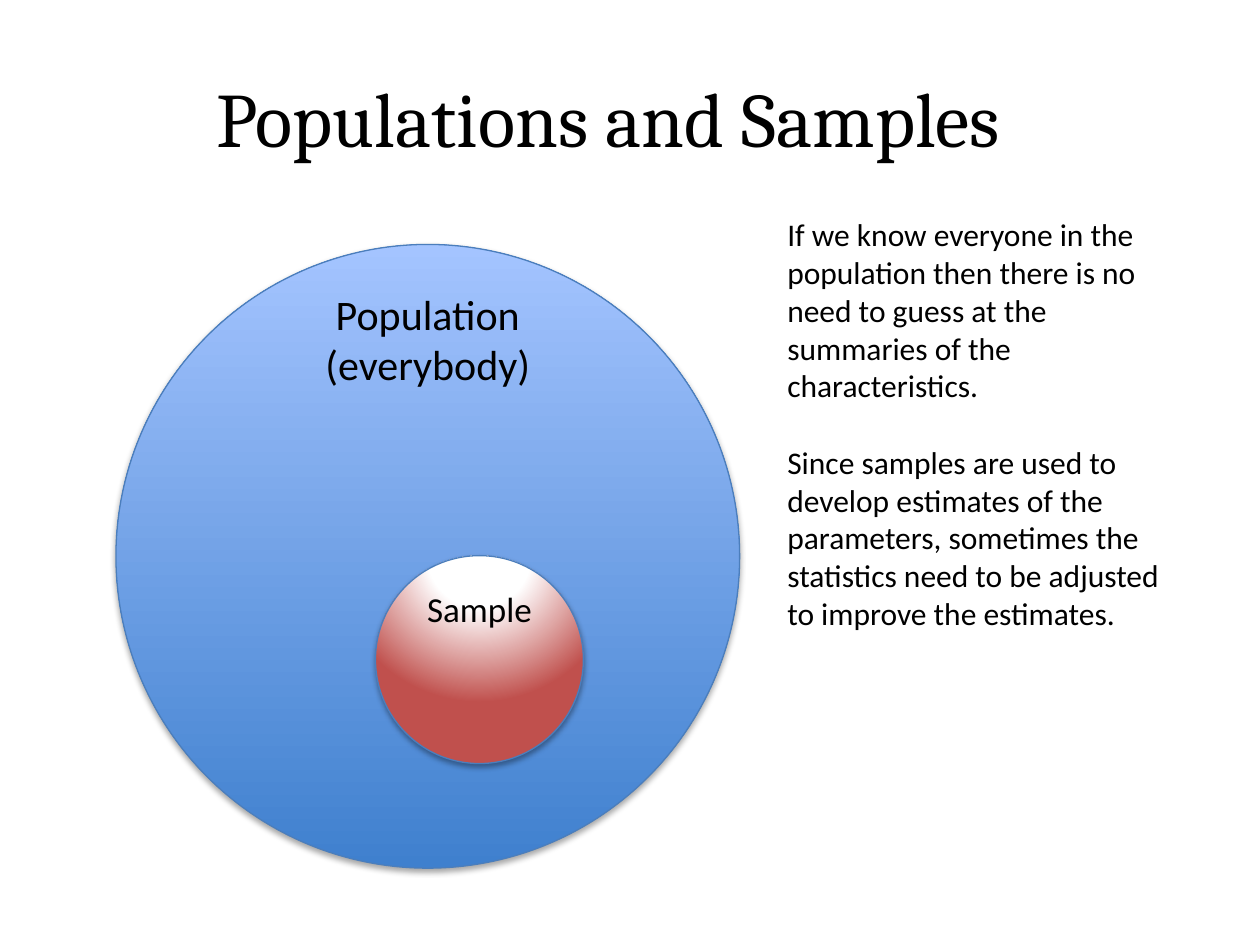
from lxml import etree
from pptx import Presentation
from pptx.dml.color import RGBColor
from pptx.enum.shapes import MSO_SHAPE
from pptx.enum.text import MSO_ANCHOR, PP_ALIGN
from pptx.oxml.ns import qn
from pptx.util import Inches, Pt

OVAL, RECTANGLE = MSO_SHAPE.OVAL, MSO_SHAPE.RECTANGLE
TOP, MIDDLE = MSO_ANCHOR.TOP, MSO_ANCHOR.MIDDLE
LEFT, CENTER = PP_ALIGN.LEFT, PP_ALIGN.CENTER
BLACK = RGBColor(0x00, 0x00, 0x00)
WHITE = RGBColor(0xFF, 0xFF, 0xFF)
DEEP_BLUE = RGBColor(0x3F, 0x80, 0xCE)
LIGHT_BLUE = RGBColor(0xA4, 0xC4, 0xFF)
OUTLINE_BLUE = RGBColor(0x4B, 0x7E, 0xBC)
RED = RGBColor(0xC0, 0x50, 0x4D)
WIDTH, HEIGHT = 10, 7.5

TITLE = "Populations and Samples"
NOTES = [
    "If we know everyone in the population then there is no need to guess "
    "at the summaries of the characteristics.",
    "Since samples are used to develop estimates of the parameters, sometimes "
    "the statistics need to be adjusted to improve the estimates.",
]
POPULATION = {
    "circle": (0.92, 1.94, 4.95),
    "stops": [(0, DEEP_BLUE), (100, LIGHT_BLUE)],
    "label": ["Population\n(everybody)"],
    "label_area": (2.32, 2.24, 2.15, 0.91),
    "size": 24,
}
SAMPLE = {
    "circle": (2.98, 4.41, 1.65),
    "stops": [(0, WHITE), (35, WHITE), (100, RED)],
    "focus": {"l": 50, "t": -80, "r": 50, "b": 180},
    "label": ["Sample"],
    "label_area": (2.9, 4.61, 1.81, 0.44),
    "size": 20,
}


def place(area):
    return [Inches(length) for length in area]


def add_child(parent, tag, **attributes):
    values = {name: str(value) for name, value in attributes.items()}
    return etree.SubElement(parent, qn(tag), values)


def write(box, texts, size, font="Calibri", align=LEFT, anchor=TOP, gap=0):
    frame = box.text_frame
    frame.word_wrap = True
    frame.vertical_anchor = anchor
    for index, text in enumerate(texts):
        para = frame.add_paragraph() if index else frame.paragraphs[0]
        para.text = text
        para.alignment = align
        if index:
            para.space_before = Pt(gap)
        for span in para.runs:
            span.font.name = font
            span.font.size = Pt(size)
            span.font.color.rgb = BLACK


def fill_gradient(shape, stops, focus=None):
    properties = shape._element.spPr
    gradient = etree.Element(qn("a:gradFill"), rotWithShape="1")
    stop_list = add_child(gradient, "a:gsLst")
    for position, color in stops:
        stop = add_child(stop_list, "a:gs", pos=position * 1000)
        add_child(stop, "a:srgbClr", val=color)
    if focus:
        radial = add_child(gradient, "a:path", path="circle")
        edges = {side: share * 1000 for side, share in focus.items()}
        add_child(radial, "a:fillToRect", **edges)
    else:
        add_child(gradient, "a:lin", ang=270 * 60000, scaled=0)
    properties.find(qn("a:prstGeom")).addnext(gradient)


def add_shadow(shape):
    shape.shadow.inherit = False
    effects = shape._element.spPr.find(qn("a:effectLst"))
    shadow = add_child(effects, "a:outerShdw", blurRad=Pt(3.1), dist=Pt(1.8),
                       dir=90 * 60000, rotWithShape=0)
    color = add_child(shadow, "a:srgbClr", val=BLACK)
    add_child(color, "a:alpha", val=35000)


def add_circle(page, group):
    left, top, diameter = group["circle"]
    circle = page.shapes.add_shape(OVAL, *place((left, top, diameter, diameter)))
    fill_gradient(circle, group["stops"], group.get("focus"))
    circle.line.color.rgb = OUTLINE_BLUE
    circle.line.width = Pt(0.75)
    add_shadow(circle)
    label = page.shapes.add_textbox(*place(group["label_area"]))
    write(label, group["label"], group["size"], align=CENTER)


def add_notes_panel(page):
    panel = page.shapes.add_shape(RECTANGLE, *place((6.15, 1.66, 3.39, 3.43)))
    panel.fill.solid()
    panel.fill.fore_color.rgb = WHITE
    panel.line.fill.background()
    panel.shadow.inherit = False
    write(panel, NOTES, 18, gap=22)


def main():
    deck = Presentation()
    deck.slide_width, deck.slide_height = Inches(WIDTH), Inches(HEIGHT)
    page = deck.slides.add_slide(deck.slide_layouts[5])
    title = page.shapes.title
    title.left, title.top, title.width, title.height = place((0.33, 0.3, 9, 1.25))
    write(title, [TITLE], 44, font="Cambria", align=CENTER, anchor=MIDDLE)
    add_circle(page, POPULATION)
    add_notes_panel(page)
    add_circle(page, SAMPLE)
    deck.save("out.pptx")


if __name__ == "__main__":
    main()
